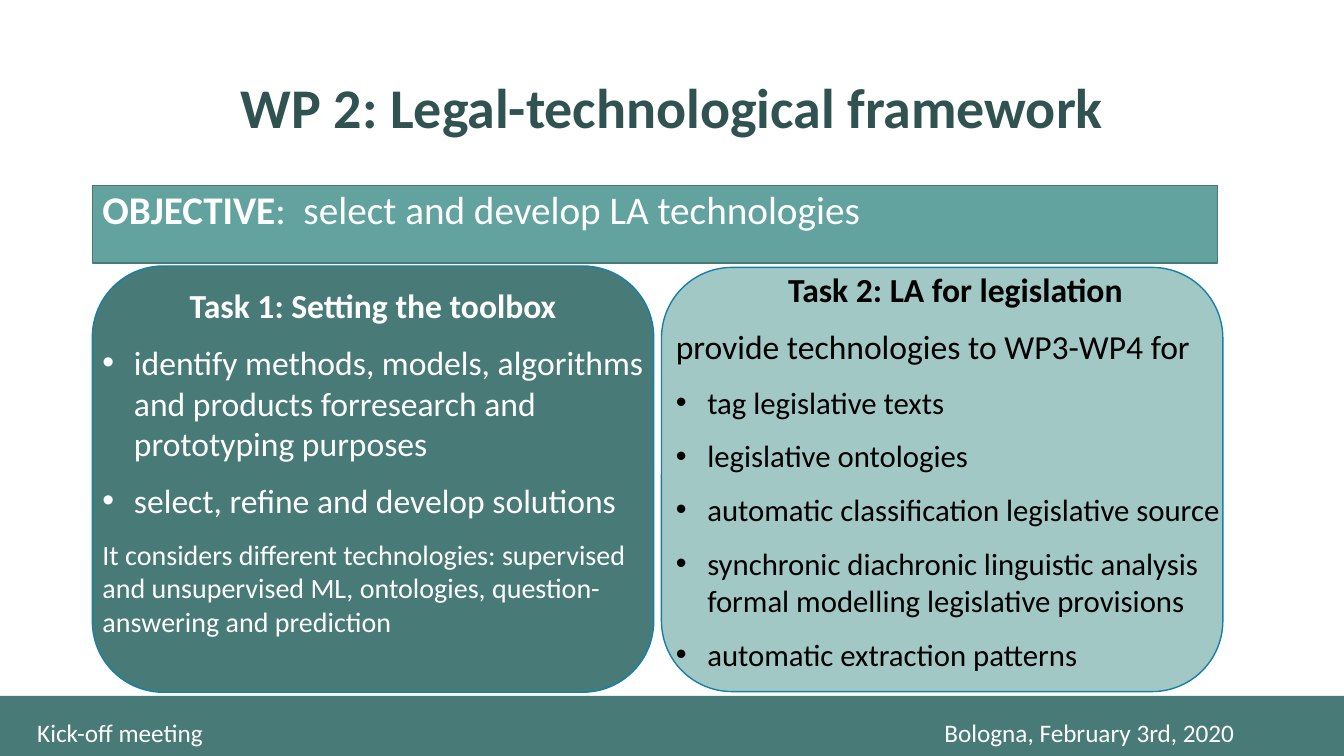
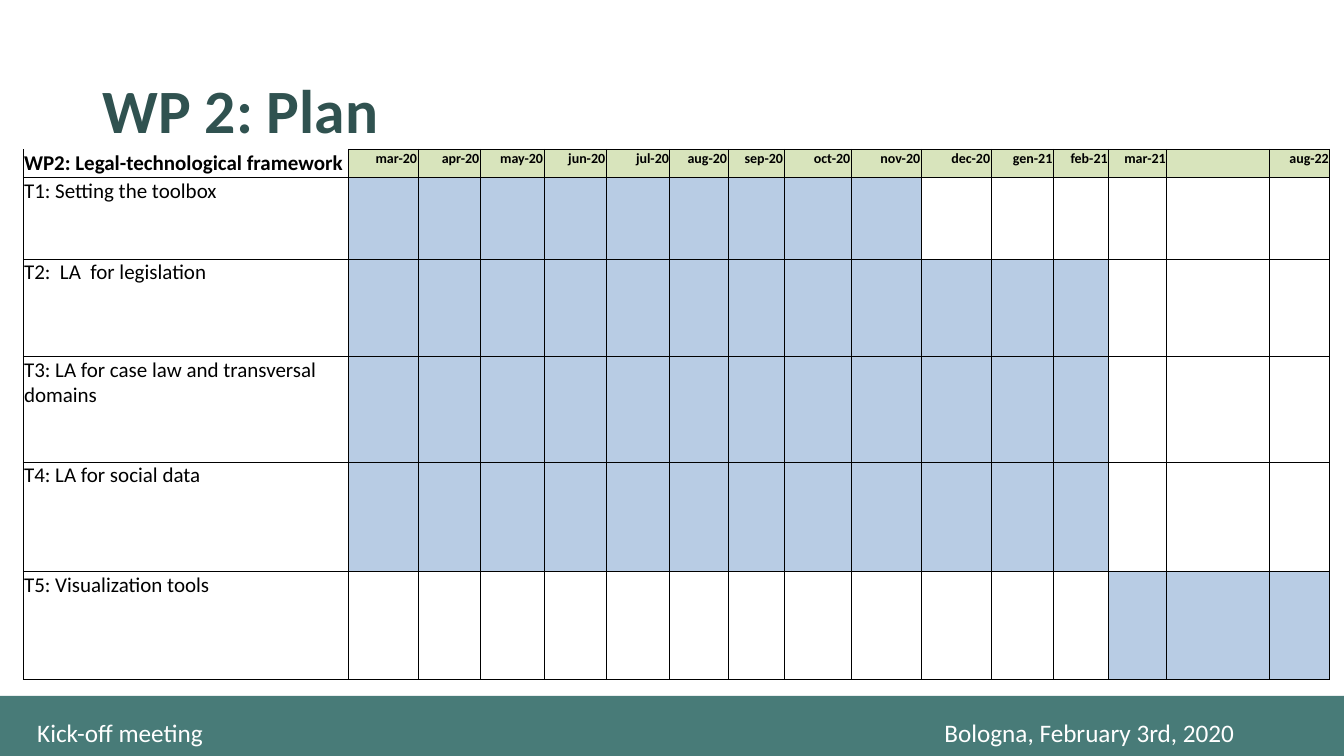
from lxml import etree
from pptx import Presentation
from pptx.dml.color import RGBColor
from pptx.enum import shapes, text
from pptx.oxml import ns
from pptx.util import Pt

WHITE = RGBColor(0xFF, 0xFF, 0xFF)
BLACK = RGBColor(0x00, 0x00, 0x00)
DARK_TEAL = RGBColor(0x30, 0x52, 0x50)
TEAL = RGBColor(0x48, 0x7B, 0x78)
MID_TEAL = RGBColor(0x62, 0xA3, 0x9F)
PALE_TEAL = RGBColor(0xA1, 0xC8, 0xC5)
TEAL_EDGE = RGBColor(0x49, 0x79, 0x76)
BLUE_EDGE = RGBColor(0x15, 0x80, 0xA9)
MONTH_GREEN = RGBColor(0xD8, 0xE4, 0xBC)
ACTIVE_BLUE = RGBColor(0xB8, 0xCC, 0xE4)

FONT = "Calibri"
LEFT, CENTER, RIGHT = text.PP_ALIGN.LEFT, text.PP_ALIGN.CENTER, text.PP_ALIGN.RIGHT
TOP, MIDDLE = text.MSO_ANCHOR.TOP, text.MSO_ANCHOR.MIDDLE
RECT = shapes.MSO_SHAPE.RECTANGLE
ROUNDED = shapes.MSO_SHAPE.ROUNDED_RECTANGLE
COMPARISON, TITLE_ONLY = 4, 5
WIDTH, HEIGHT = 960, 540


class Deck:
    """Holds the shared style and the slide being drawn."""

    def __init__(self):
        self.prs = Presentation()
        self.prs.slide_width, self.prs.slide_height = Pt(WIDTH), Pt(HEIGHT)
        self.slide = None

    def new_slide(self, layout):
        self.slide = self.prs.slides.add_slide(self.prs.slide_layouts[layout])

    def place(self, item, box):
        item.left, item.top, item.width, item.height = map(Pt, box)

    def style(self, paragraph, size, color, bold=False, align=LEFT):
        paragraph.alignment = align
        font = paragraph.font
        font.name, font.size, font.bold = FONT, Pt(size), bold
        font.color.rgb = color

    def frame(self, holder, anchor):
        frame = holder.text_frame
        frame.auto_size = text.MSO_AUTO_SIZE.NONE
        frame.word_wrap = True
        frame.vertical_anchor = anchor
        return frame

    def paint(self, item, fill, edge=None):
        item.fill.solid()
        item.fill.fore_color.rgb = fill
        if edge is None:
            item.line.fill.background()
        else:
            item.line.color.rgb = edge
            item.line.width = Pt(1)

    def panel(self, preset, box, fill, edge=None):
        panel = self.slide.shapes.add_shape(preset, *map(Pt, box))
        panel.shadow.inherit = False
        self.paint(panel, fill, edge)
        return panel

    def footer(self, event, venue):
        band = self.panel(RECT, (0, 497, WIDTH, 43), TEAL)
        caption = self.slide.shapes.add_textbox(Pt(19.5), Pt(509), Pt(940), Pt(29))
        line = self.frame(caption, TOP).paragraphs[0]
        line.text = f"{event}\t{venue}"
        stops = etree.SubElement(line._p.get_or_add_pPr(), ns.qn("a:tabLst"))
        etree.SubElement(stops, ns.qn("a:tab"), pos=str(int(Pt(648))), algn="l")
        self.style(line, 18, WHITE)
        for number, part in enumerate((band, caption), 101):
            part.element.xpath(".//p:cNvPr")[0].set("id", str(number))
            self.prs.slide_master.shapes.element.append(part.element)

    def title(self, words, box, size, align=LEFT):
        heading = self.slide.shapes.title
        self.place(heading, box)
        line = self.frame(heading, MIDDLE).paragraphs[0]
        line.text = words
        line.line_spacing = 0.9
        self.style(line, size, DARK_TEAL, True, align)

    def body(self, index, box):
        holder = self.slide.placeholders[index]
        self.place(holder, box)
        self.slide.shapes.element.append(holder.element)
        return holder

    def indent(self, paragraph, bullet):
        props = paragraph._p.get_or_add_pPr()
        hang = int(Pt(22.5)) if bullet else 0
        props.set("marL", str(hang))
        props.set("indent", str(-hang))
        if bullet:
            etree.SubElement(props, ns.qn("a:buFont"), typeface="Arial")
            etree.SubElement(props, ns.qn("a:buChar"), char="•")
        else:
            etree.SubElement(props, ns.qn("a:buNone"))

    def objective(self, index, box, label, aim):
        banner = self.body(index, box)
        self.paint(banner, MID_TEAL, TEAL_EDGE)
        line = self.frame(banner, TOP).paragraphs[0]
        self.indent(line, False)
        self.style(line, 28, WHITE)
        line.line_spacing = 0.9
        line.space_before = Pt(0)
        for words, bold in ((label, True), (aim, False)):
            run = line.add_run()
            run.text, run.font.bold = words, bold

    def task(self, index, box, color, heading, entries):
        frame = self.frame(self.body(index, box), TOP)
        for number, (words, size, bullet) in enumerate([(heading, 24, False)] + entries):
            line = frame.add_paragraph() if number else frame.paragraphs[0]
            line.text = words
            self.indent(line, bullet)
            line.space_before = line.space_after = Pt(6)
            first = number == 0
            self.style(line, size, color, first, CENTER if first else LEFT)

    def cell(self, cell, words, size, bold, align, fill, open_top=False):
        cell.margin_left = cell.margin_right = cell.margin_top = Pt(0.7)
        cell.margin_bottom = 0
        line = cell.text_frame.paragraphs[0]
        line.text = words
        self.style(line, size, BLACK, bold, align)
        if fill is None:
            cell.fill.background()
        else:
            cell.fill.solid()
            cell.fill.fore_color.rgb = fill
        props = cell._tc.get_or_add_tcPr()
        for position, side in enumerate("LRTB"):
            border = etree.Element(ns.qn(f"a:ln{side}"), w=str(int(Pt(0.5))))
            if open_top and side == "T":
                etree.SubElement(border, ns.qn("a:noFill"))
            else:
                paint = etree.SubElement(border, ns.qn("a:solidFill"))
                etree.SubElement(paint, ns.qn("a:srgbClr"), val=str(BLACK))
            props.insert(position, border)

    def plan(self, origin, widths, heights, heading, months, tasks):
        grid = self.slide.shapes.add_table(
            len(heights), len(widths), *map(Pt, (*origin, sum(widths), sum(heights)))
        ).table
        grid.first_row = grid.horz_banding = False
        for column, width in zip(grid.columns, widths):
            column.width = Pt(width)
        for row, height in zip(grid.rows, heights):
            row.height = Pt(height)
        self.cell(grid.cell(0, 0), heading, 15, True, LEFT, None, open_top=True)
        for col, month in enumerate(months, 1):
            self.cell(grid.cell(0, col), month, 10, True, RIGHT, MONTH_GREEN)
        for row, (name, start, end) in enumerate(tasks, 1):
            self.cell(grid.cell(row, 0), name, 15, False, LEFT, None)
            for col in range(1, len(widths)):
                fill = ACTIVE_BLUE if start <= col <= end else None
                self.cell(grid.cell(row, col), "", 15, False, LEFT, fill)


def framework_slide(deck):
    deck.new_slide(COMPARISON)
    deck.footer("Kick-off meeting", "Bologna, February 3rd, 2020")
    unused = deck.slide.placeholders[3].element
    unused.getparent().remove(unused)
    deck.title("WP 2: Legal-technological framework", (66, 47, 828, 63), 40, CENTER)
    deck.objective(1, (66, 132.5, 803.5, 55.5), "OBJECTIVE",
                   ":  select and develop LA technologies")
    deck.panel(ROUNDED, (66, 190, 401, 304.5), TEAL, BLUE_EDGE)
    deck.panel(ROUNDED, (472.5, 191, 401, 303), PALE_TEAL, BLUE_EDGE)
    deck.task(2, (66, 200, 401, 262), WHITE, "Task 1: Setting the toolbox", [
        ("identify methods, models, algorithms and products forresearch "
         "and prototyping purposes", 24, True),
        ("select, refine and develop solutions", 24, True),
        ("It considers different technologies: supervised and unsupervised ML, "
         "ontologies, question-answering and prediction", 20, False),
    ])
    uses = [
        "tag legislative texts",
        "legislative ontologies",
        "automatic classification legislative source",
        "synchronic diachronic linguistic analysis formal modelling legislative provisions",
        "automatic extraction patterns",
    ]
    deck.task(4, (475.5, 188.5, 414, 298), BLACK, "Task 2: LA for legislation",
              [("provide technologies to WP3-WP4 for", 24, False)]
              + [(use, 22, True) for use in uses])


def plan_slide(deck):
    deck.new_slide(TITLE_ONLY)
    deck.title("WP 2: Plan", (66, 29, 828, 104), 44)
    widths = [232.5, 49.5, 44.5, 45.5, 44.5, 45.5, 41.5, 40, 48,
              50, 50, 44.5, 39.5, 41.5, 73.5, 43]
    heights = [20.5, 58, 69.5, 75.5, 78, 77.5]
    months = ["mar-20", "apr-20", "may-20", "jun-20", "jul-20", "aug-20", "sep-20",
              "oct-20", "nov-20", "dec-20", "gen-21", "feb-21", "mar-21", "", "aug-22"]
    tasks = [
        ("T1: Setting the toolbox", 1, 9),
        ("T2:  LA  for legislation", 1, 12),
        ("T3: LA for case law and transversal domains", 1, 12),
        ("T4: LA for social data", 1, 12),
        ("T5: Visualization tools", 13, 15),
    ]
    deck.plan((16.5, 106.5), widths, heights,
              "WP2: Legal-technological framework", months, tasks)


def main():
    deck = Deck()
    framework_slide(deck)
    plan_slide(deck)
    deck.prs.save("out.pptx")


if __name__ == "__main__":
    main()
